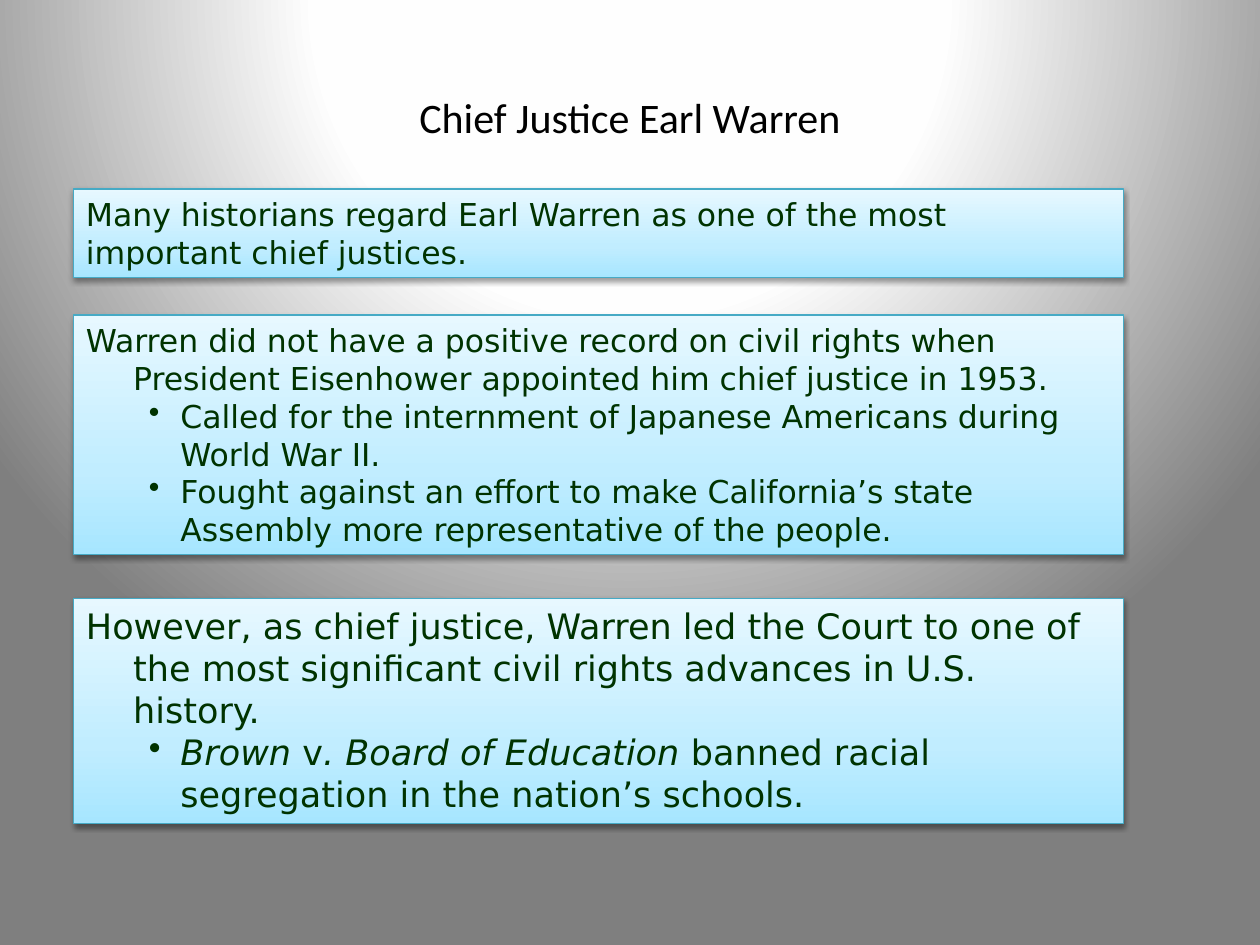
"""Build a slide about Chief Justice Earl Warren with three gradient text panels."""
from dataclasses import dataclass

from lxml.etree import SubElement
from pptx import Presentation
from pptx.dml.color import RGBColor
from pptx.enum.shapes import MSO_SHAPE
from pptx.enum.text import MSO_ANCHOR as Anchor, MSO_AUTO_SIZE as AutoSize, PP_ALIGN as Align
from pptx.oxml.ns import qn
from pptx.util import Pt

BLACK = RGBColor(0x00, 0x00, 0x00)
DARK_GREEN = RGBColor(0x00, 0x33, 0x00)
TEAL = RGBColor(0x46, 0xAA, 0xC5)
PANEL_STOPS = (
    (0, RGBColor(0xA7, 0xE6, 0xFF)),
    (35, RGBColor(0xC1, 0xED, 0xFF)),
    (100, RGBColor(0xE7, 0xF8, 0xFF)),
)
BACKGROUND_STOPS = (
    (0, RGBColor(0xFF, 0xFF, 0xFF)),
    (40, RGBColor(0xFE, 0xFE, 0xFE)),
    (100, RGBColor(0x7F, 0x7F, 0x7F)),
)
PANEL_LEFT, PANEL_WIDTH = 42, 600


@dataclass(frozen=True)
class Span:
    text: str
    italic: bool = False


@dataclass(frozen=True)
class Line:
    spans: tuple[Span, ...]
    margin: float = 0
    indent: float = 0
    bullet: bool = False


@dataclass(frozen=True)
class Panel:
    top: float
    height: float
    size: float
    lines: tuple[Line, ...]


def hanging(text: str) -> Line:
    return Line((Span(text),), margin=27, indent=-27)


def bulleted(*spans: Span) -> Line:
    return Line(spans, margin=54, indent=-18, bullet=True)


PANELS = (
    Panel(108, 50.5, 18, (
        Line((Span("Many historians regard Earl Warren as one of the most important chief justices."),)),
    )),
    Panel(180, 137, 18, (
        hanging("Warren did not have a positive record on civil rights when "
                "President Eisenhower appointed him chief justice in 1953."),
        bulleted(Span("Called for the internment of Japanese Americans during World War II.")),
        bulleted(Span("Fought against an effort to make California’s state "
                      "Assembly more representative of the people.")),
    )),
    Panel(342, 128.5, 20, (
        hanging("However, as chief justice, Warren led the Court to one of "
                "the most significant civil rights advances in U.S. history."),
        bulleted(Span("Brown ", italic=True), Span("v"), Span(". Board of Education", italic=True),
                 Span(" banned racial segregation in the nation’s schools.")),
    )),
)


def set_stops(properties, stops) -> object:
    """Replace the stops and direction of a gradient fill and return the fill element."""
    gradient = properties.find(qn("a:gradFill"))
    for child in list(gradient):
        gradient.remove(child)
    stop_list = SubElement(gradient, qn("a:gsLst"))
    for position, color in stops:
        stop = SubElement(stop_list, qn("a:gs"), pos=str(position * 1000))
        SubElement(stop, qn("a:srgbClr"), val=str(color))
    return gradient


def paint_background(slide) -> None:
    slide.background.fill.gradient()
    properties = next(slide.element.iter(qn("p:bgPr")))
    gradient = set_stops(properties, BACKGROUND_STOPS)
    circle = SubElement(gradient, qn("a:path"))
    circle.set("path", "circle")
    SubElement(circle, qn("a:fillToRect"), l="50000", t="-80000", r="50000", b="180000")


def add_shadow(shape) -> None:
    shape.shadow.inherit = False
    effects = shape.element.spPr.find(qn("a:effectLst"))
    shadow = SubElement(effects, qn("a:outerShdw"), blurRad=str(Pt(3.1)), dist=str(Pt(1.6)),
                        dir="5400000", rotWithShape="0")
    color = SubElement(shadow, qn("a:srgbClr"), val=str(BLACK))
    SubElement(color, qn("a:alpha"), val="38000")


def write_text(paragraph, text: str, *, font: str, size: float, color: RGBColor,
               align: Align = Align.LEFT, italic: bool = False) -> None:
    paragraph.alignment = align
    run = paragraph.add_run()
    run.text = text
    run.font.name = font
    run.font.size = Pt(size)
    run.font.italic = italic
    run.font.color.rgb = color


def add_title(slide, text: str) -> None:
    frame = slide.shapes.add_textbox(Pt(36), Pt(21.6), Pt(648), Pt(90)).text_frame
    frame.word_wrap = True
    frame.vertical_anchor = Anchor.MIDDLE
    write_text(frame.paragraphs[0], text, font="Calibri", size=24, color=BLACK, align=Align.CENTER)


def add_panel(slide, panel: Panel) -> None:
    shape = slide.shapes.add_shape(MSO_SHAPE.RECTANGLE, Pt(PANEL_LEFT), Pt(panel.top),
                                   Pt(PANEL_WIDTH), Pt(panel.height))
    shape.fill.gradient()
    gradient = set_stops(shape.element.spPr, PANEL_STOPS)
    SubElement(gradient, qn("a:lin"), ang="16200000", scaled="1")
    shape.line.color.rgb = TEAL
    shape.line.width = Pt(0.75)
    add_shadow(shape)
    frame = shape.text_frame
    frame.word_wrap = True
    frame.vertical_anchor = Anchor.TOP
    frame.auto_size = AutoSize.SHAPE_TO_FIT_TEXT
    for index, line in enumerate(panel.lines):
        paragraph = frame.add_paragraph() if index else frame.paragraphs[0]
        for span in line.spans:
            write_text(paragraph, span.text, font="DejaVu Sans", size=panel.size,
                       color=DARK_GREEN, italic=span.italic)
        properties = paragraph._p.get_or_add_pPr()
        properties.set("marL", str(Pt(line.margin)))
        properties.set("indent", str(Pt(line.indent)))
        if line.bullet:
            paragraph.level = 1
            SubElement(properties, qn("a:buChar"), char="•")


def main() -> None:
    presentation = Presentation()
    presentation.slide_width, presentation.slide_height = Pt(720), Pt(540)
    slide = presentation.slides.add_slide(presentation.slide_layouts[6])
    paint_background(slide)
    add_title(slide, "Chief Justice Earl Warren")
    for panel in PANELS:
        add_panel(slide, panel)
    presentation.save("out.pptx")


if __name__ == "__main__":
    main()
